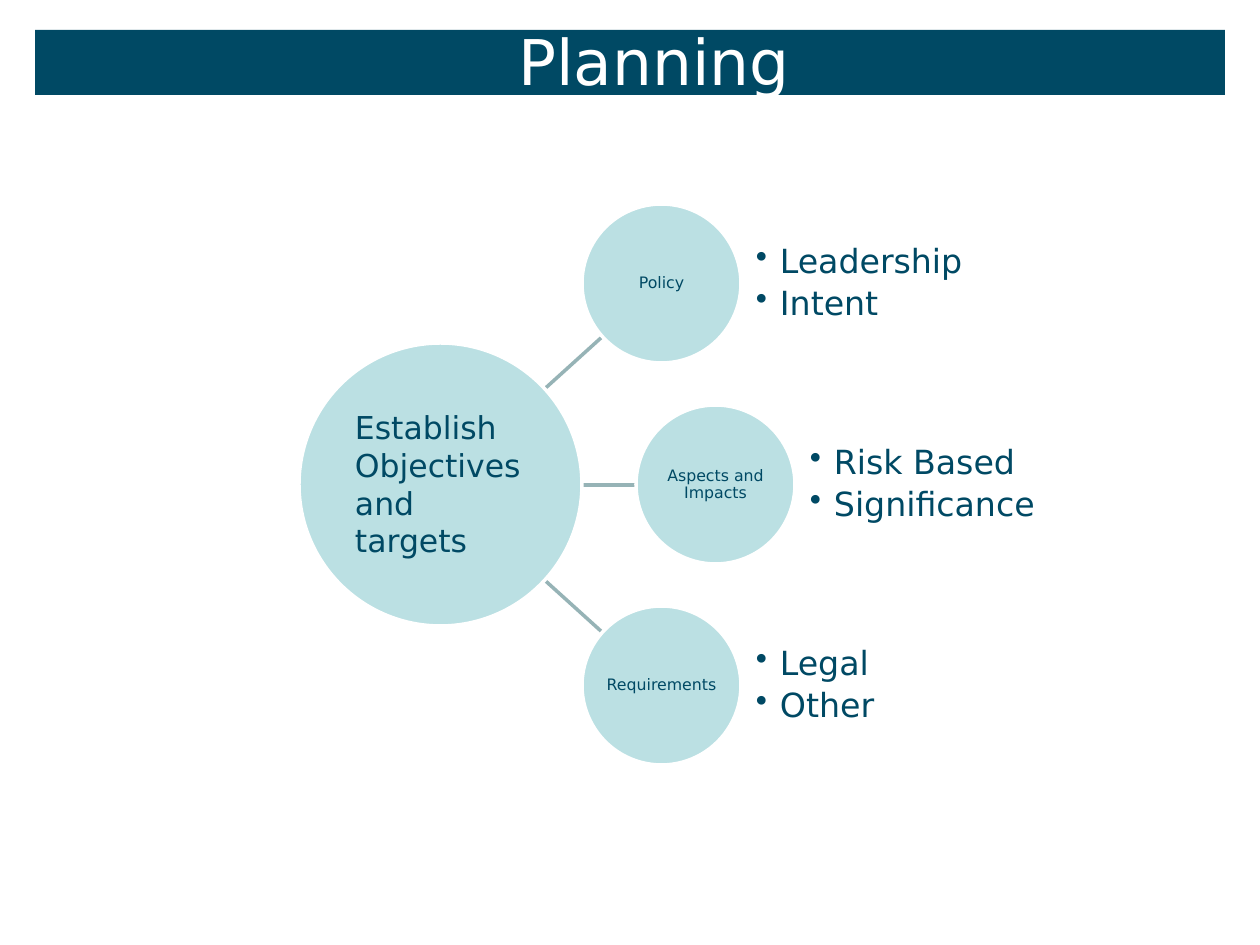
from lxml import etree
from pptx import Presentation
from pptx.dml.color import RGBColor
from pptx.enum.shapes import MSO_CONNECTOR, MSO_SHAPE
from pptx.enum.text import MSO_ANCHOR, MSO_AUTO_SIZE, PP_ALIGN
from pptx.oxml.ns import qn
from pptx.util import Emu, Pt

PX = 914400 / 126
FONT = "DejaVu Sans"
COLORS = {
    "navy": "004964",
    "aqua": "BBE0E3",
    "spoke": "96B3B6",
    "white": "FFFFFF",
}


def px(*lengths):
    return [Emu(round(length * PX)) for length in lengths]


def format_text(frame, size, color, align, spacing, inset_x, inset_y, anchor):
    frame.word_wrap = True
    frame.auto_size = MSO_AUTO_SIZE.NONE
    frame.vertical_anchor = anchor
    frame.margin_left = frame.margin_right = px(inset_x)[0]
    frame.margin_top = frame.margin_bottom = px(inset_y)[0]
    for paragraph in frame.paragraphs:
        paragraph.alignment = align
        paragraph.line_spacing = spacing
        for run in paragraph.runs:
            run.font.name = FONT
            run.font.size = Pt(size)
            run.font.color.rgb = RGBColor.from_string(COLORS[color])


prs = Presentation()
prs.slide_width, prs.slide_height = px(1260, 945)
slide = prs.slides.add_slide(prs.slide_layouts[5])
shapes = slide.shapes

# Title on its band
title = shapes.title
title.left, title.top, title.width, title.height = px(123, 26, 1062, 77)
title.text_frame.text = "Planning"
format_text(title.text_frame, 36, "white", PP_ALIGN.CENTER, 0.75, 13, 6, MSO_ANCHOR.BOTTOM)

band = shapes.add_shape(MSO_SHAPE.RECTANGLE, *px(35, 30, 1190, 65))
band.shadow.inherit = False
band.fill.solid()
band.fill.fore_color.rgb = RGBColor.from_string(COLORS["navy"])
band.line.fill.background()
title.element.addprevious(band.element)

# Spokes, partly covered by the hub
for start_x, start_y, end_x, end_y in [
    (539, 575, 602, 632),
    (539, 485, 635, 485),
    (539, 394, 602, 337),
]:
    spoke = shapes.add_connector(MSO_CONNECTOR.STRAIGHT, *px(start_x, start_y, end_x, end_y))
    spoke.line.color.rgb = RGBColor.from_string(COLORS["spoke"])
    spoke.line.width = Pt(2)
    etree.SubElement(spoke.element.spPr, qn("a:effectLst"))

# Hub and topic circles, with the points beside each topic
HUB = (299, 343, 283, "", [])
TOPICS = [
    (582, 204, 159, "Policy", ["Leadership", "Intent"]),
    (636, 405, 159, "Aspects and Impacts", ["Risk Based", "Significance"]),
    (582, 606, 159, "Requirements", ["Legal", "Other"]),
]
for left, top, size, topic, points in [HUB, *TOPICS]:
    circle = shapes.add_shape(MSO_SHAPE.OVAL, *px(left, top, size, size))
    circle.shadow.inherit = False
    circle.fill.solid()
    circle.fill.fore_color.rgb = RGBColor.from_string(COLORS["aqua"])
    circle.line.color.rgb = RGBColor.from_string(COLORS["white"])
    circle.line.width = Pt(2)
    if not topic:
        continue
    circle.text_frame.text = topic
    format_text(circle.text_frame, 9, "navy", PP_ALIGN.CENTER, 0.9, 1, 1, MSO_ANCHOR.MIDDLE)

    details = shapes.add_textbox(*px(left + 174, top, 238, size)).text_frame
    details.text = "\n".join(points)
    for point in details.paragraphs:
        properties = point._p.get_or_add_pPr()
        indent = px(24)[0]
        properties.set("marL", str(indent))
        properties.set("indent", str(-indent))
        etree.SubElement(properties, qn("a:buChar"), char="•")
        point.space_after = Pt(3.5)
    format_text(details, 19, "navy", PP_ALIGN.LEFT, 0.9, 0, 0, MSO_ANCHOR.MIDDLE)

# Goal written over the hub
goal = shapes.add_shape(MSO_SHAPE.RECTANGLE, *px(342, 402, 198, 165))
goal.shadow.inherit = False
goal.fill.solid()
goal.fill.fore_color.rgb = RGBColor.from_string(COLORS["aqua"])
goal.line.fill.background()
goal.text_frame.text = "Establish\nObjectives and\ntargets"
format_text(goal.text_frame, 18, "navy", PP_ALIGN.LEFT, 1.0, 13, 6, MSO_ANCHOR.TOP)

prs.save("out.pptx")
